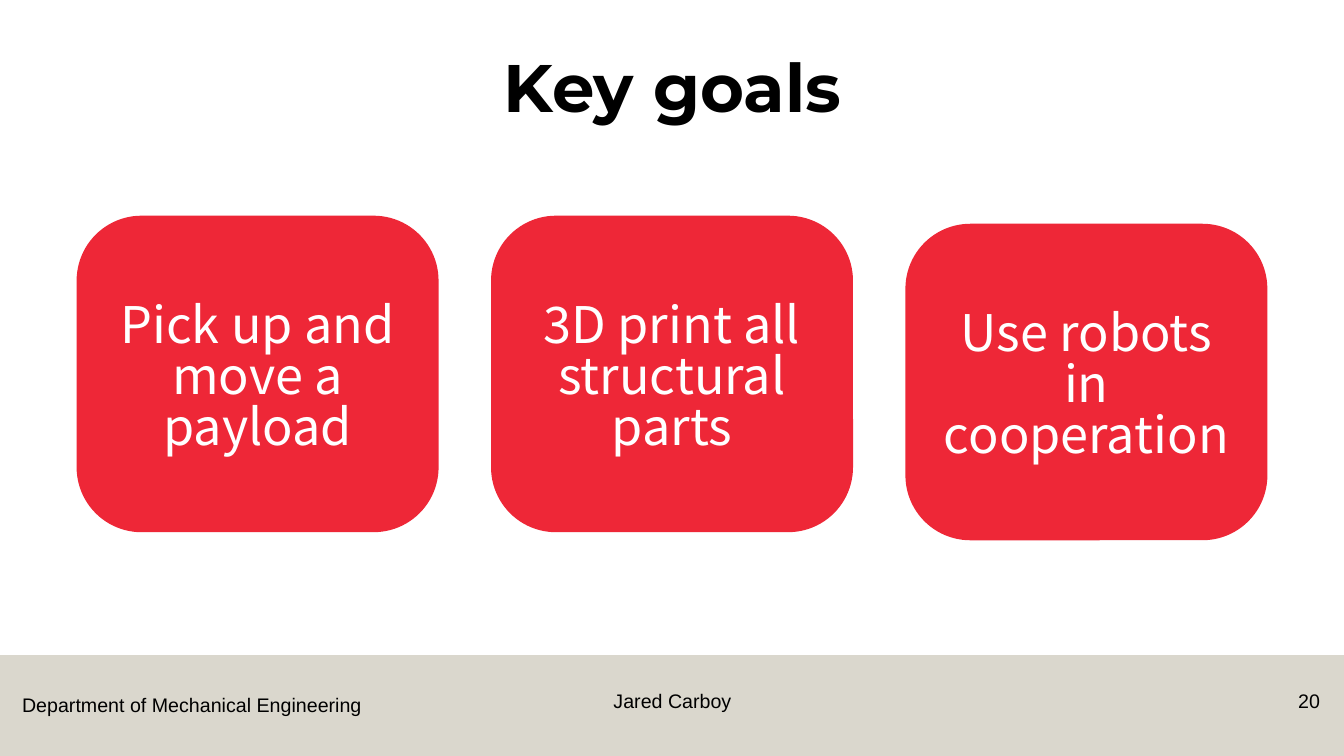
"""Build the key goals slide: a title, three goal cards and a footer band."""
import dataclasses

import lxml.etree
import pptx
import pptx.dml.color
import pptx.enum.shapes
import pptx.enum.text
import pptx.oxml.ns
import pptx.util

TITLE = "Key goals"
GOALS = [
    ("Pick up and move a payload", 0),
    ("3D print all structural parts", 0),
    ("Use robots in cooperation", 0.08),
]

Inches = pptx.util.Inches
Align = pptx.enum.text.PP_ALIGN
Anchor = pptx.enum.text.MSO_ANCHOR
Shape = pptx.enum.shapes.MSO_SHAPE

FOOTER = [
    ("Department of Mechanical Engineering", (0.12, 6.83, 3.59, 0.34), Align.LEFT, False),
    ("Jared Carboy", (4.42, 6.79, 4.5, 0.4), Align.CENTER, True),
    ("20", (12.42, 6.79, 0.77, 0.4), Align.RIGHT, True),
]


@dataclasses.dataclass(frozen=True)
class TextStyle:
    family: str
    size: int
    color: str
    bold: bool = False
    spacing: float = 1.0


@dataclasses.dataclass(frozen=True)
class Theme:
    card: str = "EE2737"
    band: str = "B7B09C"
    title: TextStyle = TextStyle("Montserrat", 48, "000000", True, 0.9)
    goal: TextStyle = TextStyle("Noto Sans CJK JP", 36, "FFFFFF", spacing=0.84)
    footer: TextStyle = TextStyle("Arial", 14, "000000")


THEME = Theme()
WIDTH, HEIGHT = 13.33, 7.5
BAND_HEIGHT = 1
CARD_LEFT, CARD_TOP, CARD_WIDTH, CARD_HEIGHT = 0.76, 2.14, 3.59, 3.14
CARD_STEP = 4.11


def write(box, text, style, align, wrap=True):
    frame = box.text_frame
    frame.word_wrap = wrap
    para = frame.paragraphs[0]
    para.text = text
    para.alignment = align
    para.line_spacing = style.spacing
    para.font.name = style.family
    para.font.size = pptx.util.Pt(style.size)
    para.font.bold = style.bold
    para.font.color.rgb = pptx.dml.color.RGBColor.from_string(style.color)
    return frame


def add_label(page, text, place, style, align, wrap=True):
    box = page.shapes.add_textbox(*map(Inches, place))
    write(box, text, style, align, wrap).vertical_anchor = Anchor.TOP


def add_panel(page, kind, place, color):
    panel = page.shapes.add_shape(kind, *map(Inches, place))
    panel.shadow.inherit = False
    panel.fill.solid()
    panel.fill.fore_color.rgb = pptx.dml.color.RGBColor.from_string(color)
    panel.line.fill.background()
    return panel


def add_band(page):
    place = (0, HEIGHT - BAND_HEIGHT, WIDTH, BAND_HEIGHT)
    band = add_panel(page, Shape.RECTANGLE, place, THEME.band)
    color = band.fill._xPr.find(".//" + pptx.oxml.ns.qn("a:srgbClr"))
    lxml.etree.SubElement(color, pptx.oxml.ns.qn("a:alpha"), val="50000")


def add_card(page, column, text, drop):
    place = (CARD_LEFT + column * CARD_STEP, CARD_TOP + drop, CARD_WIDTH, CARD_HEIGHT)
    card = add_panel(page, Shape.ROUNDED_RECTANGLE, place, THEME.card)
    card.adjustments[0] = 0.205
    frame = write(card, text, THEME.goal, Align.CENTER)
    frame.vertical_anchor = Anchor.MIDDLE
    frame.margin_left = frame.margin_right = frame.margin_top = Inches(0.15)
    frame.margin_bottom = Inches(0.05)


def main():
    deck = pptx.Presentation()
    deck.slide_width, deck.slide_height = Inches(WIDTH), Inches(HEIGHT)
    page = deck.slides.add_slide(deck.slide_layouts[6])
    add_band(page)
    for column, (text, drop) in enumerate(GOALS):
        add_card(page, column, text, drop)
    for text, place, align, wrap in FOOTER:
        add_label(page, text, place, THEME.footer, align, wrap)
    add_label(page, TITLE, (0.92, 0.49, 11.5, 1.09), THEME.title, Align.CENTER)
    deck.save("out.pptx")


if __name__ == "__main__":
    main()
